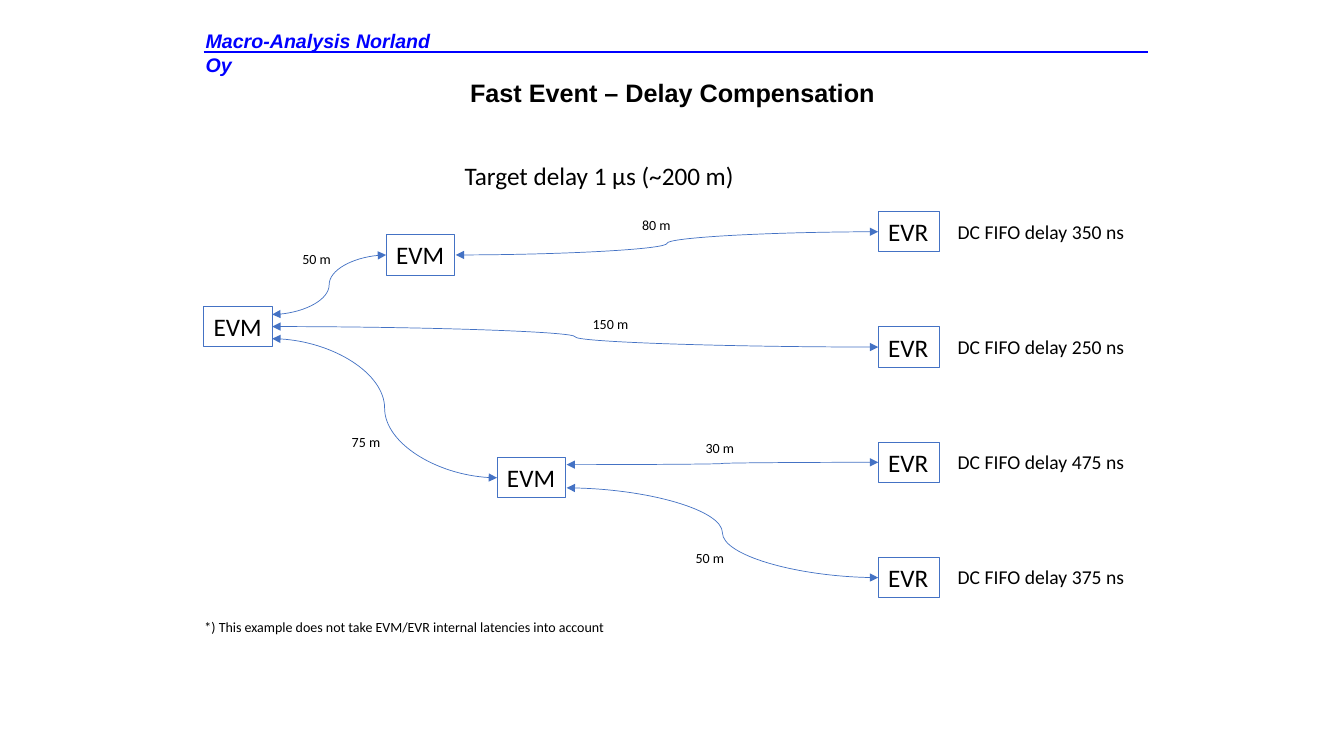
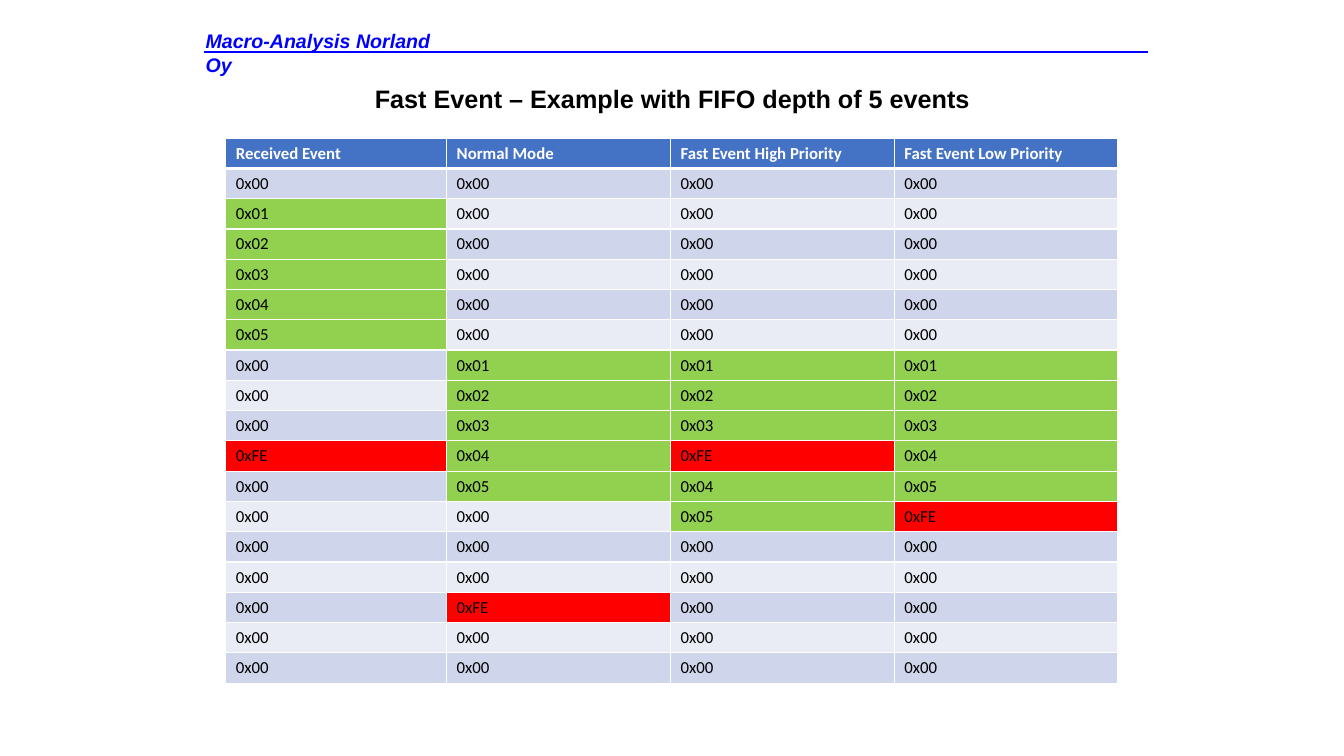
from lxml import etree
from pptx import Presentation
from pptx.dml.color import RGBColor
from pptx.enum.shapes import MSO_CONNECTOR, MSO_SHAPE
from pptx.enum.text import MSO_ANCHOR, MSO_AUTO_SIZE, PP_ALIGN
from pptx.oxml import parse_xml
from pptx.oxml.ns import nsdecls, qn
from pptx.util import Inches, Pt

STRAIGHT, CURVE = MSO_CONNECTOR.STRAIGHT, MSO_CONNECTOR.CURVE
RECTANGLE = MSO_SHAPE.RECTANGLE
TOP, MIDDLE = MSO_ANCHOR.TOP, MSO_ANCHOR.MIDDLE
LEFT, CENTER = PP_ALIGN.LEFT, PP_ALIGN.CENTER
FIT_SHAPE = MSO_AUTO_SIZE.SHAPE_TO_FIT_TEXT

COLORS = {
    "black": "000000",
    "white": "FFFFFF",
    "brand": "0000FF",
    "accent": "4472C4",
    "dark band": "CFD5EA",
    "light band": "E9EBF5",
    "queued": "92D050",
    "fast": "FF0000",
}
RGB = {name: RGBColor.from_string(value) for name, value in COLORS.items()}


def write(shape, text, size, font="Calibri", color="black", bold=False, italic=False,
          align=LEFT, anchor=TOP, wrap=False):
    frame = shape.text_frame
    frame.word_wrap = wrap
    frame.vertical_anchor = anchor
    if not wrap:
        frame.auto_size = FIT_SHAPE
    para = frame.paragraphs[0]
    para.alignment = align
    span = para.add_run()
    span.text = text
    span.font.name = font
    span.font.size = Pt(size)
    span.font.bold = bold
    span.font.italic = italic
    span.font.color.rgb = RGB[color]


def add_line(page, kind, start, end, color, width):
    ends = [Inches(value) for value in (*start, *end)]
    line = page.shapes.add_connector(kind, *ends)
    line.line.color.rgb = RGB[color]
    line.line.width = Pt(width)
    etree.SubElement(line._element.spPr, qn("a:effectLst"))
    return line


deck = Presentation()
deck.slide_width = Inches(13.33)
deck.slide_height = Inches(7.5)

pages = []
for title, title_top in (
    ("Fast Event – Delay Compensation", 0.52),
    ("Fast Event – Example with FIFO depth of 5 events", 0.58),
):
    page = deck.slides.add_slide(deck.slide_layouts[6])
    box = page.shapes.add_textbox(Inches(2.17), Inches(title_top), Inches(9), Inches(0.79))
    write(box, title, 18, "Arial", bold=True, align=CENTER, anchor=MIDDLE, wrap=True)
    box = page.shapes.add_textbox(Inches(1.94), Inches(0.24), Inches(2.6), Inches(0.33))
    write(box, "Macro-Analysis Norland Oy", 14, "Arial", "brand", bold=True, italic=True, wrap=True)
    add_line(page, STRAIGHT, (2.02, 0.52), (11.39, 0.52), "brand", 1.5)
    pages.append(page)

delay_page, fifo_page = pages

NODE_HEIGHT = 0.4
RECEIVER_LEFT = 8.71
receiver_tops = [2.1 + 3.43 / 3 * row for row in range(4)]
receiver_ports = [(RECEIVER_LEFT, top + NODE_HEIGHT / 2) for top in receiver_tops]

nodes = [("EVM", 2.02, 3.04, 0.68), ("EVM", 3.83, 2.33, 0.68), ("EVM", 4.93, 4.54, 0.68)]
nodes += [("EVR", RECEIVER_LEFT, top, 0.61) for top in receiver_tops]
for name, left, top, width in nodes:
    node = delay_page.shapes.add_shape(
        RECTANGLE, Inches(left), Inches(top), Inches(width), Inches(NODE_HEIGHT))
    node.shadow.inherit = False
    node.fill.background()
    node.line.color.rgb = RGB["accent"]
    node.line.width = Pt(0.75)
    write(node, name, 18)

for start, end in (
    ((2.7, 3.12), (3.83, 2.53)),
    ((2.7, 3.36), (4.93, 4.74)),
    ((2.7, 3.24), receiver_ports[1]),
    ((4.52, 2.53), receiver_ports[0]),
    ((5.62, 4.61), receiver_ports[2]),
    ((5.62, 4.84), receiver_ports[3]),
):
    fiber = add_line(delay_page, CURVE, start, end, "accent", 0.5)
    outline = fiber.line._get_or_add_ln()
    for tag in ("a:headEnd", "a:tailEnd"):
        etree.SubElement(outline, qn(tag), type="triangle")

labels = [
    ("50 m", 2.9, 2.44, 0.49, 0.27, 10),
    ("75 m", 3.39, 4.25, 0.49, 0.27, 10),
    ("80 m", 6.27, 2.1, 0.49, 0.27, 10),
    ("150 m", 5.78, 3.08, 0.56, 0.27, 10),
    ("30 m", 6.9, 4.31, 0.49, 0.27, 10),
    ("50 m", 6.8, 5.4, 0.49, 0.27, 10),
    ("Target delay 1 μs (~200 m)", 4.51, 1.54, 2.9, 0.4, 18),
    ("*) This example does not take EVM/EVR internal latencies into account",
     1.93, 6.09, 4.23, 0.27, 10),
]
for delay, top in zip((350, 250, 475, 375), receiver_tops):
    labels.append((f"DC FIFO delay {delay} ns", 9.4, top + 0.03, 1.87, 0.34, 14))
for text, left, top, width, height, size in labels:
    box = delay_page.shapes.add_textbox(
        Inches(left), Inches(top), Inches(width), Inches(height))
    write(box, text, size)

event_columns = {
    "Received Event": "00 01 02 03 04 05 00 00 00 FE 00 00 00 00 00 00 00",
    "Normal Mode": "00 00 00 00 00 00 01 02 03 04 05 00 00 00 FE 00 00",
    "Fast Event High Priority": "00 00 00 00 00 00 01 02 03 FE 04 05 00 00 00 00 00",
    "Fast Event Low Priority": "00 00 00 00 00 00 01 02 03 04 05 FE 00 00 00 00 00",
}
ROW_COUNT = 18
table = fifo_page.shapes.add_table(
    ROW_COUNT, len(event_columns), Inches(2.24), Inches(1.37), Inches(8.85), Inches(5.4)).table
for row in table.rows:
    row.height = Inches(0.3)

for column, (heading, codes) in enumerate(event_columns.items()):
    table.columns[column].width = Inches(2.22 if column else 2.19)
    texts = [heading] + ["0x" + code for code in codes.split()]
    for row, text in enumerate(texts):
        cell = table.cell(row, column)
        is_heading = row == 0
        if is_heading:
            fill = "accent"
        elif text == "0xFE":
            fill = "fast"
        elif text != "0x00":
            fill = "queued"
        else:
            fill = "dark band" if row % 2 else "light band"
        borders = {"lnL": 1, "lnR": 1, "lnT": 3 if row == 1 else 1, "lnB": 3 if is_heading else 1}
        properties = cell._tc.get_or_add_tcPr()
        for side, width in borders.items():
            properties.append(parse_xml(
                f'<a:{side} {nsdecls("a")} w="{Pt(width)}"><a:solidFill>'
                f'<a:srgbClr val="{COLORS["white"]}"/></a:solidFill></a:{side}>'))
        cell.fill.solid()
        cell.fill.fore_color.rgb = RGB[fill]
        span = cell.text_frame.paragraphs[0].add_run()
        span.text = text
        span.font.name = "Calibri"
        span.font.size = Pt(12)
        span.font.bold = is_heading
        span.font.color.rgb = RGB["white" if is_heading else "black"]

deck.save("out.pptx")
